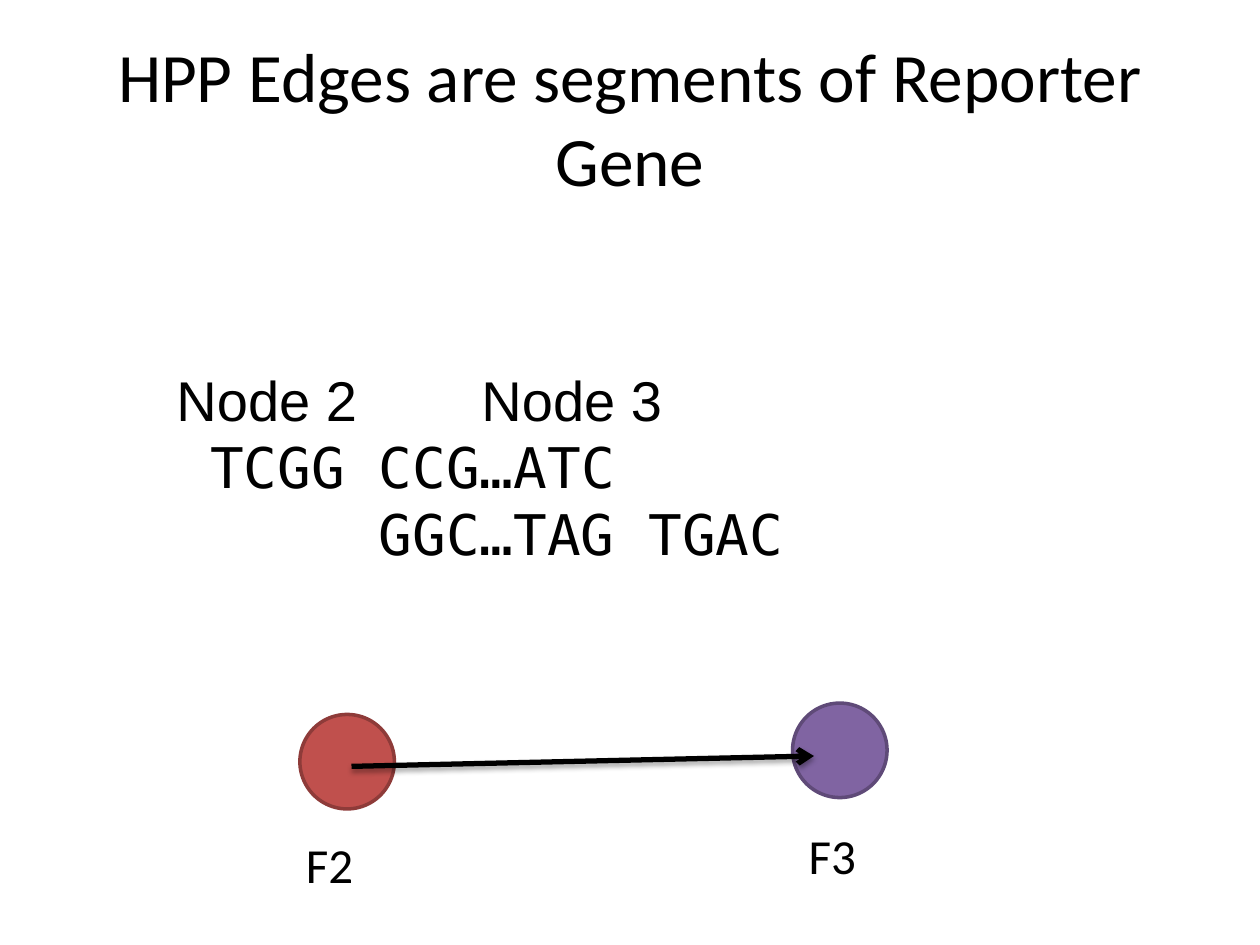
"""Build the slide that shows HPP edges as segments of a reporter gene."""
from lxml import etree
from pptx import Presentation, util as u
from pptx.dml.color import RGBColor
from pptx.enum import shapes, text
from pptx.oxml.ns import qn

WIDTH, HEIGHT = u.Inches(10), u.Inches(7.5)
MONO_ADVANCE = 0.2675
COLORS = {
    "text": "000000",
    "red": "C0504D",
    "red edge": "8E3B39",
    "purple": "8064A2",
    "purple edge": "5F4A78",
}
SEQUENCE_LINES = [
    ("Arial", [(3, "Node 2"), (12.05, "Node 3")]),
    ("DejaVu Sans Mono", [(4, "TCGG CCG…ATC")]),
    ("DejaVu Sans Mono", [(9, "GGC…TAG TGAC")]),
]
NODES = [
    ("F2", (23.8, 75.6), (23.3, 87.7), "red"),
    ("F3", (62.9, 74.4), (63.2, 86.7), "purple"),
]


def color(name):
    """Return the named colour."""
    return RGBColor.from_string(COLORS[name])


def place(across, down):
    """Turn percentages of the slide's size into lengths."""
    return int(WIDTH * across / 100), int(HEIGHT * down / 100)


def apply(target, values):
    """Set every attribute in a dict of format values."""
    for name, value in values.items():
        setattr(target, name, value)


def add_box(page, corner, size, **frame_format):
    """Add a wrapping text box and return its frame."""
    box = page.shapes.add_textbox(*place(*corner), *place(*size))
    apply(box.text_frame, {"word_wrap": True, **frame_format})
    return box.text_frame


def add_span(para, words, font, size):
    """Add one formatted run of text."""
    span = para.add_run()
    span.text = words
    apply(span.font, {"name": font, "size": u.Pt(size)})
    span.font.color.rgb = color("text")


def add_title(page, words):
    """Add the centred slide title."""
    frame = add_box(page, (5, 4), (90, 16.7), vertical_anchor=text.MSO_ANCHOR.MIDDLE)
    para = frame.paragraphs[0]
    para.alignment = text.PP_ALIGN.CENTER
    add_span(para, words, "Calibri", 39.6)


def add_sequences(page, lines):
    """Add the sequence lines, each piece starting at a tab stop."""
    frame = add_box(page, (5, 23.3), (90, 66), margin_top=u.Inches(1.15))
    for index, (font, pieces) in enumerate(lines):
        para = frame.add_paragraph() if index else frame.paragraphs[0]
        properties = para._p.get_or_add_pPr()
        stops = etree.SubElement(properties, qn("a:tabLst"))
        for column, words in pieces:
            position = u.Inches(column * MONO_ADVANCE)
            etree.SubElement(stops, qn("a:tab"), pos=str(position), algn="l")
            add_span(para, "\t" + words, font, 32)


def add_node(page, label, corner, label_corner, fill):
    """Add a graph node and its label."""
    node = page.shapes.add_shape(
        shapes.MSO_SHAPE.OVAL, *place(*corner), *place(7.5, 10))
    node.shadow.inherit = False
    node.fill.solid()
    node.fill.fore_color.rgb = color(fill)
    node.line.color.rgb = color(fill + " edge")
    node.line.width = u.Pt(2)
    frame = add_box(page, label_corner, (8.3, 7.6))
    add_span(frame.paragraphs[0], label, "Calibri", 28)


def add_edge(page, start, end):
    """Add a shadowed arrow between two nodes."""
    edge = page.shapes.add_connector(
        shapes.MSO_CONNECTOR.STRAIGHT, *place(*start), *place(*end))
    edge.line.color.rgb = color("text")
    edge.line.width = u.Pt(3)
    etree.SubElement(edge.line._get_or_add_ln(), qn("a:tailEnd"), type="arrow")
    effects = etree.SubElement(edge._element.spPr, qn("a:effectLst"))
    shadow = etree.SubElement(
        effects, qn("a:outerShdw"), blurRad=str(u.Pt(3.1)),
        dist=str(u.Pt(1.8)), dir="5400000", rotWithShape="0")
    shade = etree.SubElement(shadow, qn("a:srgbClr"), val=COLORS["text"])
    etree.SubElement(shade, qn("a:alpha"), val="35000")


def main():
    """Build and save the deck."""
    deck = Presentation()
    apply(deck, {"slide_width": WIDTH, "slide_height": HEIGHT})
    page = deck.slides.add_slide(deck.slide_layouts[6])
    add_title(page, "HPP Edges are segments of Reporter Gene")
    add_sequences(page, SEQUENCE_LINES)
    for node in NODES:
        add_node(page, *node)
    add_edge(page, (27.9, 81.1), (64.6, 80))
    deck.save("out.pptx")


if __name__ == "__main__":
    main()
